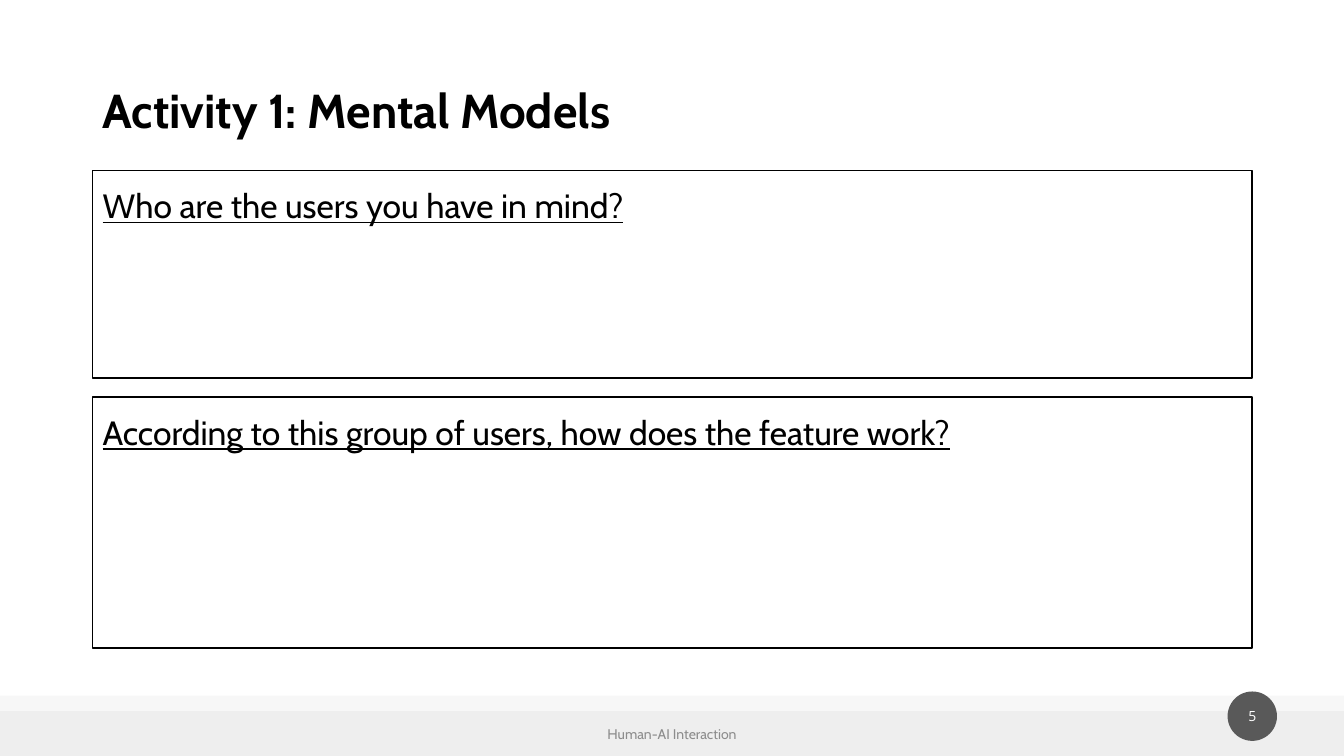
"""Build a worksheet slide with two question boxes."""
from pptx import Presentation
from pptx.dml.color import RGBColor
from pptx.enum.shapes import MSO_SHAPE
from pptx.enum.text import MSO_ANCHOR, PP_ALIGN
from pptx.util import Inches, Pt

RECT, OVAL = MSO_SHAPE.RECTANGLE, MSO_SHAPE.OVAL
TOP, MID = MSO_ANCHOR.TOP, MSO_ANCHOR.MIDDLE
LEFT, CENTER = PP_ALIGN.LEFT, PP_ALIGN.CENTER
BLACK = RGBColor(0x00, 0x00, 0x00)
WHITE = RGBColor(0xFF, 0xFF, 0xFF)
BAND = RGBColor(0xEE, 0xEE, 0xEE)
PALE = RGBColor(0xF7, 0xF7, 0xF7)
DARK = RGBColor(0x59, 0x59, 0x59)
GRAY = RGBColor(0x8C, 0x8C, 0x8C)
WIDE, HIGH = 13.33, 7.5
EDGE, SPAN = 0.92, 11.5


def add_form(slide, kind, box, fill, line=None):
    """Add a filled shape, outlined if a line colour is given."""
    form = slide.shapes.add_shape(kind, *map(Inches, box))
    form.shadow.inherit = False
    form.fill.solid()
    form.fill.fore_color.rgb = fill
    if line is None:
        form.line.fill.background()
    else:
        form.line.color.rgb = line
        form.line.width = Pt(1)
    return form


def add_text(form, text, size, color=BLACK, face="Cabin", align=LEFT, anchor=MID):
    """Write one paragraph into a shape and return it with its run."""
    frame = form.text_frame
    frame.word_wrap = True
    frame.vertical_anchor = anchor
    para = frame.paragraphs[0]
    para.alignment = align
    run = para.add_run()
    run.text = text
    run.font.size = Pt(size)
    run.font.name = face
    run.font.color.rgb = color
    return para, run


def add_label(slide, box):
    """Add an empty text box."""
    return slide.shapes.add_textbox(*map(Inches, box))


def add_title(slide, box, text):
    """Add the bold slide title."""
    para, run = add_text(add_label(slide, box), text, 34)
    para.line_spacing = 0.9
    run.font.bold = True


def add_panel(slide, box, text):
    """Add an outlined answer box headed by an underlined question."""
    form = add_form(slide, RECT, box, WHITE, BLACK)
    para, run = add_text(form, text, 24, anchor=TOP)
    para.line_spacing = 1.25
    para.space_before = Pt(10)
    run.font.underline = True


def add_footer(slide, box, text, page):
    """Add the footer bands, its caption and the page badge."""
    left, top, width, height = box
    rim = 0.15
    add_form(slide, RECT, (left, top + rim, width, height - rim), BAND)
    add_form(slide, RECT, (left, top, width, rim), PALE)
    badge = 0.49
    mid = EDGE + SPAN
    add_form(slide, OVAL, (mid - badge / 2, top - 0.04, badge, badge), DARK)
    label = add_label(slide, (mid - 0.3, top - 0.01, 0.6, 0.43))
    add_text(label, page, 10, WHITE, "Open Sans", CENTER)
    label = add_label(slide, (left + width / 2 - 2.25, top + 0.18, 4.5, 0.4))
    add_text(label, text, 10, GRAY, align=CENTER)


def main():
    """Build and save the slide."""
    deck = Presentation()
    deck.slide_width, deck.slide_height = Inches(WIDE), Inches(HIGH)
    slide = deck.slides.add_slide(deck.slide_layouts[6])
    add_footer(slide, (0, 6.9, WIDE, HIGH - 6.9), "Human-AI Interaction", "5")
    add_title(slide, (EDGE, 0.4, SPAN, 1.45), "Activity 1: Mental Models")
    top, gap = 1.69, 0.19
    for text, height in (
        ("Who are the users you have in mind?", 2.06),
        ("According to this group of users, how does the feature work?", 2.49),
    ):
        add_panel(slide, (EDGE, top, SPAN, height), text)
        top += height + gap
    deck.save("out.pptx")


if __name__ == "__main__":
    main()
